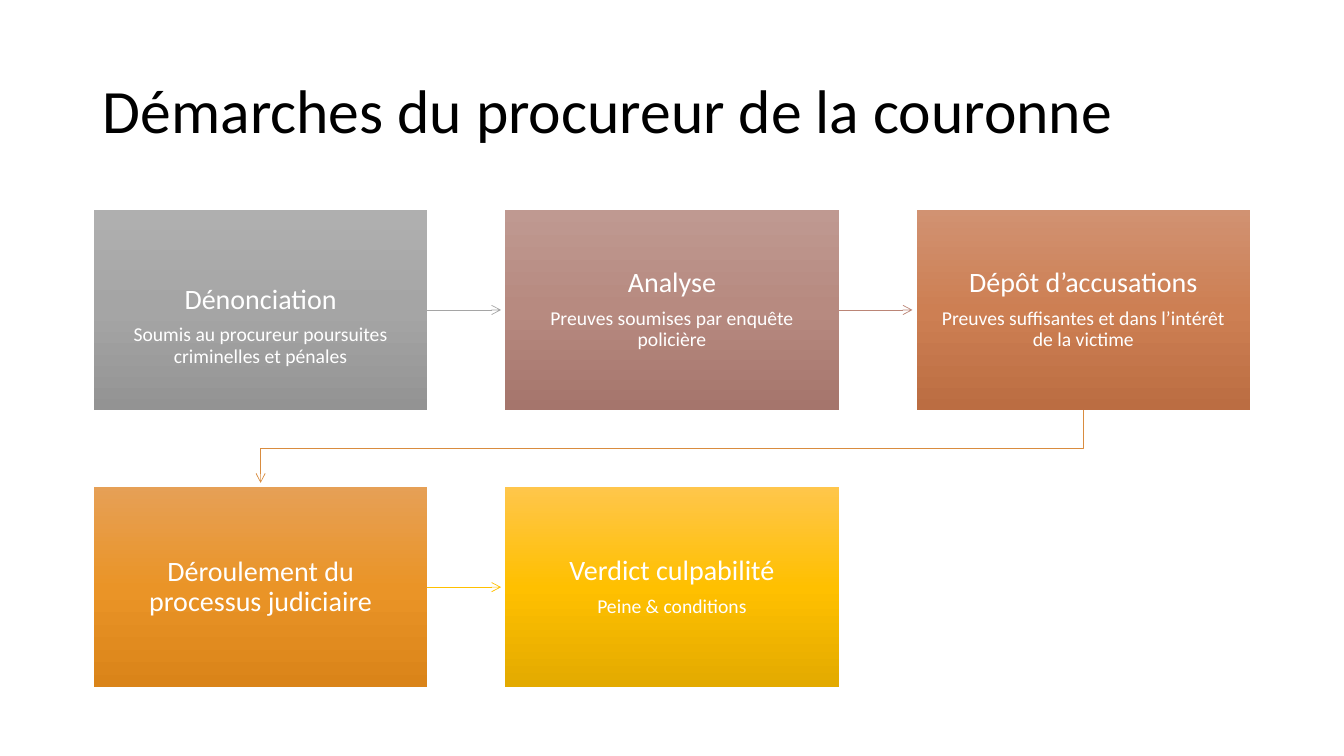
import copy

import pptx
import pptx.dml.color
import pptx.enum.shapes
import pptx.enum.text
import pptx.oxml
import pptx.oxml.ns
import pptx.util

Inches, Pt = pptx.util.Inches, pptx.util.Pt
qn = pptx.oxml.ns.qn
PP_ALIGN = pptx.enum.text.PP_ALIGN
MIDDLE = pptx.enum.text.MSO_ANCHOR.MIDDLE

# Content
TITLE = "Démarches du procureur de la couronne"
STEPS = [  # heading, detail, colour key
    ("Dénonciation", "Soumis au procureur poursuites criminelles et pénales", "grey"),
    ("Analyse", "Preuves soumises par enquête policière", "rose"),
    ("Dépôt d’accusations", "Preuves suffisantes et dans l’intérêt de la victime", "copper"),
    ("Déroulement du processus judiciaire", "", "orange"),
    ("Verdict culpabilité", "Peine & conditions", "gold"),
]
COLORS = {"black": "000000", "white": "FFFFFF"}
GRADIENTS = {  # top, middle, bottom
    "grey": ("AFAFAF", "A5A5A5", "939393"),
    "rose": ("BF9991", "B78A80", "A5756C"),
    "copper": ("D19272", "CD7F53", "BB6D42"),
    "orange": ("E6A056", "EA9427", "DA8419"),
    "gold": ("FFC64B", "FFC000", "E3AA00"),
}
ARROW_COLORS = ["A5A5A5", "BB8576", "D98C3F", "FFC000"]

# Grid
COLUMNS = 3
LEFT, TOP = 0.93, 2.08
BOX_W, BOX_H = 3.31, 1.99
PITCH_X, PITCH_Y = 4.08, 2.75
ARROW_GAP = 0.04
MARGINS = {"margin_left": 0.16, "margin_right": 0.16, "margin_top": 0.16, "margin_bottom": 0.16}
FIRST_MARGINS = {"margin_left": 0.23, "margin_right": 0.23, "margin_top": 0.48, "margin_bottom": 0.16}


def rgb(value):
    return pptx.dml.color.RGBColor.from_string(value)


def box_origin(index):
    row, column = divmod(index, COLUMNS)
    return LEFT + column * PITCH_X, TOP + row * PITCH_Y


def format_run(run, size, color):
    for name, value in {"name": "Calibri", "size": Pt(size)}.items():
        setattr(run.font, name, value)
    run.font.color.rgb = rgb(COLORS[color])


def fill_gradient(box, colors):
    box.fill.gradient()
    box.fill.gradient_angle = 270
    stop_list = box._element.spPr.find(qn("a:gradFill")).find(qn("a:gsLst"))
    stop_list.insert(1, copy.deepcopy(stop_list[0]))
    for stop, position, color in zip(box.fill.gradient_stops, (0, 0.5, 1), colors):
        stop.position = position
        stop.color.rgb = rgb(color)


def format_arrow(arrow, color):
    arrow.line.color.rgb = rgb(color)
    arrow.line.width = Pt(0.5)
    tail = pptx.oxml.parse_xml(
        '<a:tailEnd xmlns:a="http://schemas.openxmlformats.org/drawingml/2006/main" type="arrow"/>')
    arrow.line._get_or_add_ln().append(tail)


def add_step(slide, index):
    heading, detail, color = STEPS[index]
    x, y = box_origin(index)
    box = slide.shapes.add_shape(
        pptx.enum.shapes.MSO_SHAPE.RECTANGLE, Inches(x), Inches(y), Inches(BOX_W), Inches(BOX_H))
    box.shadow.inherit = False
    box.line.fill.background()
    fill_gradient(box, GRADIENTS[color])
    frame = box.text_frame
    frame.word_wrap = True
    frame.vertical_anchor = MIDDLE
    for name, value in (MARGINS if index else FIRST_MARGINS).items():
        setattr(frame, name, Inches(value))
    lines = [(heading, 20)] + ([(detail, 14)] if detail else [])
    for number, (text, size) in enumerate(lines):
        paragraph = frame.add_paragraph() if number else frame.paragraphs[0]
        after = Pt(7) if number < len(lines) - 1 else Pt(0)
        for name, value in {"alignment": PP_ALIGN.CENTER, "line_spacing": 0.9,
                            "space_after": after}.items():
            setattr(paragraph, name, value)
        run = paragraph.add_run()
        run.text = text
        format_run(run, size, "white")
    return box


def add_row_arrow(slide, index, box):
    x, y = box_origin(index)
    middle = Inches(y + BOX_H / 2)
    arrow = slide.shapes.add_connector(
        pptx.enum.shapes.MSO_CONNECTOR.STRAIGHT, Inches(x + BOX_W), middle,
        Inches(x + PITCH_X - ARROW_GAP), middle)
    arrow.begin_connect(box, 3)
    arrow._element.spPr.append(pptx.oxml.parse_xml(
        '<a:effectLst xmlns:a="http://schemas.openxmlformats.org/drawingml/2006/main"/>'))
    format_arrow(arrow, ARROW_COLORS[index])


def add_return_arrow(slide, index):
    x, y = box_origin(index)
    next_x, next_y = box_origin(index + 1)
    start_x, end_x = Inches(x + BOX_W / 2), Inches(next_x + BOX_W / 2)
    bend_y = Inches((y + BOX_H + next_y) / 2)
    builder = slide.shapes.build_freeform(start_x, Inches(y + BOX_H))
    builder.add_line_segments(
        [(start_x, bend_y), (end_x, bend_y), (end_x, Inches(next_y - ARROW_GAP))], close=False)
    arrow = builder.convert_to_shape()
    arrow.fill.background()
    arrow.shadow.inherit = False
    format_arrow(arrow, ARROW_COLORS[index])


def main():
    deck = pptx.Presentation()
    deck.slide_width, deck.slide_height = Inches(13.33), Inches(7.5)
    slide = deck.slides.add_slide(deck.slide_layouts[5])

    # Title
    title = slide.shapes.title
    for name, value in {"left": 0.92, "top": 0.4, "width": 11.5, "height": 1.45}.items():
        setattr(title, name, Inches(value))
    title.text_frame.text = TITLE
    title.text_frame.vertical_anchor = MIDDLE
    paragraph = title.text_frame.paragraphs[0]
    paragraph.alignment = PP_ALIGN.LEFT
    paragraph.line_spacing = 0.9
    format_run(paragraph.runs[0], 44, "black")

    # Steps and the arrows between them
    boxes = [add_step(slide, index) for index in range(len(STEPS))]
    for index, box in enumerate(boxes[:-1]):
        if (index + 1) % COLUMNS:
            add_row_arrow(slide, index, box)
        else:
            add_return_arrow(slide, index)

    deck.save("out.pptx")


if __name__ == "__main__":
    main()
